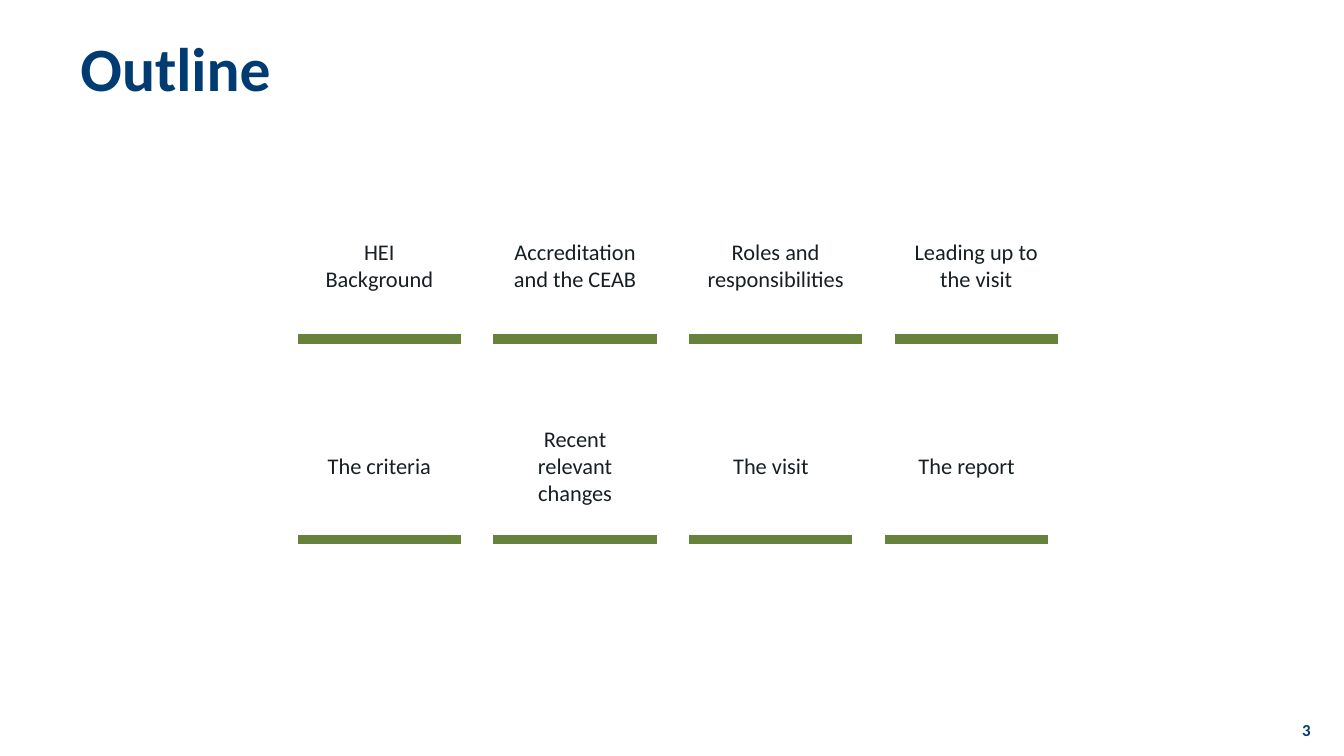
from pptx import Presentation
from pptx.dml.color import RGBColor
from pptx.enum.shapes import MSO_SHAPE
from pptx.enum.text import MSO_ANCHOR, PP_ALIGN
from pptx.util import Cm, Pt

NAVY = RGBColor(0x00, 0x3C, 0x71)
GREEN = RGBColor(0x67, 0x82, 0x3A)
WHITE = RGBColor(0xFF, 0xFF, 0xFF)
INK = RGBColor(0x17, 0x1F, 0x23)
FONT = "Calibri"

# Content: each topic with its card width in cm
NARROW, WIDE = 3.12, 3.30
TITLE = "Outline"
PAGE_NUMBER = "3"
TOPIC_ROWS = [
    [("HEI Background", NARROW), ("Accreditation and the CEAB", NARROW),
     ("Roles and responsibilities", WIDE), ("Leading up to the visit", NARROW)],
    [("The criteria", NARROW), ("Recent relevant changes", NARROW),
     ("The visit", NARROW), ("The report", NARROW)],
]

# Card grid in cm
GRID_LEFT, GRID_TOP = 5.61, 3.73
ROW_PITCH, GAP = 3.79, 0.58
CARD_HEIGHT, LABEL_HEIGHT = 2.79, 2.57


def write(shape, text, size, color, bold=False, align=PP_ALIGN.LEFT):
    frame = shape.text_frame
    frame.word_wrap = True
    frame.vertical_anchor = MSO_ANCHOR.MIDDLE
    para = frame.paragraphs[0]
    para.text = text
    para.alignment = align
    para.font.name = FONT
    para.font.size = Pt(size)
    para.font.bold = bold
    para.font.color.rgb = color
    return para


def add_box(shapes, left, top, width, height, fill):
    box = shapes.add_shape(MSO_SHAPE.RECTANGLE, Cm(left), Cm(top), Cm(width), Cm(height))
    box.shadow.inherit = False
    box.fill.solid()
    box.fill.fore_color.rgb = fill
    box.line.color.rgb = WHITE
    box.line.width = Pt(1)
    return box


def add_card(page, left, top, width, text):
    """A white label over a green card, whose lower edge shows as a bar."""
    card = page.shapes.add_group_shape()
    add_box(card.shapes, left, top, width, CARD_HEIGHT, GREEN)
    label = add_box(card.shapes, left, top, width, LABEL_HEIGHT, WHITE)
    write(label, text, 12, INK, align=PP_ALIGN.CENTER)


deck = Presentation()
deck.slide_width, deck.slide_height = Cm(25.4), Cm(14.29)
page = deck.slides.add_slide(deck.slide_layouts[6])

# Title
title = page.shapes.add_textbox(Cm(1.27), Cm(0.15), Cm(22.86), Cm(2.39))
write(title, TITLE, 33, NAVY, bold=True).line_spacing = 0.9

# Page number
number = page.shapes.add_textbox(Cm(24.1), Cm(13.59), Cm(0.92), Cm(0.41))
number.text_frame.margin_top = number.text_frame.margin_bottom = 0
write(number, PAGE_NUMBER, 9, NAVY, bold=True, align=PP_ALIGN.RIGHT)

# Topic cards
for row, topics in enumerate(TOPIC_ROWS):
    left = GRID_LEFT
    for text, width in topics:
        add_card(page, left, GRID_TOP + row * ROW_PITCH, width, text)
        left += width + GAP

deck.save("out.pptx")
